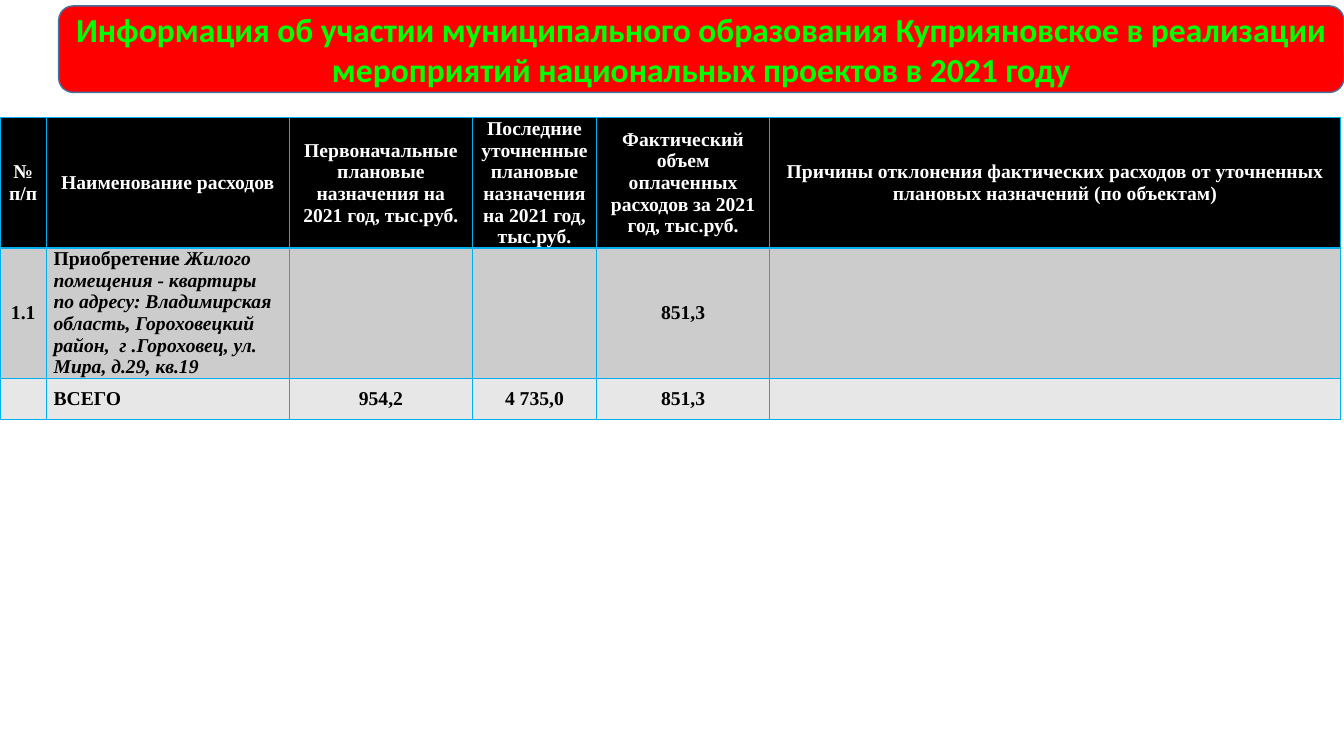
from dataclasses import dataclass

import pptx
import pptx.dml.color
import pptx.enum.shapes
import pptx.enum.text
import pptx.oxml
import pptx.oxml.ns
import pptx.util
from pptx.table import _Cell as Cell
from pptx.text.text import TextFrame

Cm = pptx.util.Cm
Pt = pptx.util.Pt
RGBColor = pptx.dml.color.RGBColor
Align = pptx.enum.text.PP_ALIGN
Anchor = pptx.enum.text.MSO_ANCHOR

WHITE = RGBColor(0xFF, 0xFF, 0xFF)
BLACK = RGBColor(0, 0, 0)
RED = RGBColor(0xFF, 0, 0)
GREEN = RGBColor(0, 0xFF, 0)
STEEL = RGBColor(0x43, 0x73, 0x9E)
CYAN = RGBColor(0, 0xB0, 0xF0)
GRAY = RGBColor(0xCC, 0xCC, 0xCC)
PALE = RGBColor(0xE7, 0xE7, 0xE7)


@dataclass
class Column:
    head: str
    width: float
    align: Align = Align.CENTER


@dataclass
class Row:
    texts: list[str]
    height: float
    fill: RGBColor
    color: RGBColor = BLACK


COLUMNS = [
    Column("№ п/п", 1.17),
    Column("Наименование расходов", 6.12, Align.LEFT),
    Column("Первоначальные плановые назначения на 2021 год, тыс.руб.", 4.62),
    Column("Последние уточненные плановые назначения на 2021 год, тыс.руб.", 3.12),
    Column("Фактический объем оплаченных расходов за 2021 год, тыс.руб.", 4.37),
    Column("Причины отклонения фактических расходов от уточненных "
           "плановых назначений (по объектам)", 14.38),
]
PLACE = ("Жилого помещения - квартиры по адресу: Владимирская область, "
         "Гороховецкий район,  г .Гороховец, ул. Мира, д.29, кв.19")
ROWS = [
    Row([col.head for col in COLUMNS], 3.28, BLACK, WHITE),
    Row(["1.1", "Приобретение ", "", "", "851,3", ""], 3.28, GRAY),
    Row(["", "ВСЕГО", "954,2", "4 735,0", "851,3", ""], 1.04, PALE),
]


def write(frame: TextFrame, text: str, *, font: str = "Times New Roman",
          size: float = 14, color: RGBColor = BLACK, italic: bool = False,
          align: Align = Align.CENTER) -> None:
    """Add a bold run to the first paragraph of the frame."""
    para = frame.paragraphs[0]
    para.alignment = align
    run = para.add_run()
    run.text = text
    run.font.name = font
    run.font.size = Pt(size)
    run.font.bold = True
    run.font.italic = italic
    run.font.color.rgb = color


def border(cell: Cell, color: RGBColor) -> None:
    props = cell._tc.get_or_add_tcPr()
    space = pptx.oxml.ns.nsdecls("a")
    for side in "LRTB":
        props.append(pptx.oxml.parse_xml(
            f'<a:ln{side} {space} w="{Pt(1)}"><a:solidFill>'
            f'<a:srgbClr val="{color}"/></a:solidFill></a:ln{side}>'))


def style(cell: Cell, fill: RGBColor) -> None:
    border(cell, CYAN)
    cell.fill.solid()
    cell.fill.fore_color.rgb = fill
    cell.vertical_anchor = Anchor.MIDDLE
    cell.margin_left = cell.margin_right = Cm(0.18)
    cell.margin_top = cell.margin_bottom = 0


def main() -> None:
    deck = pptx.Presentation()
    deck.slide_width, deck.slide_height = Cm(33.87), Cm(19.05)
    slide = deck.slides.add_slide(deck.slide_layouts[6])

    title = slide.shapes.add_shape(
        pptx.enum.shapes.MSO_SHAPE.ROUNDED_RECTANGLE,
        Cm(1.48), Cm(0.15), Cm(32.39), Cm(2.18))
    title.shadow.inherit = False
    title.fill.solid()
    title.fill.fore_color.rgb = RED
    title.line.color.rgb = STEEL
    title.line.width = Pt(1)
    title.text_frame.word_wrap = True
    title.text_frame.vertical_anchor = Anchor.MIDDLE
    write(title.text_frame,
          "Информация об участии муниципального образования Куприяновское "
          "в реализации мероприятий национальных проектов в 2021 году",
          font="Calibri", size=24, color=GREEN)

    table = slide.shapes.add_table(
        len(ROWS), len(COLUMNS), 0, Cm(2.97),
        Cm(sum(col.width for col in COLUMNS)),
        Cm(sum(row.height for row in ROWS))).table
    for grid, col in zip(table.columns, COLUMNS):
        grid.width = Cm(col.width)
    for r, row in enumerate(ROWS):
        table.rows[r].height = Cm(row.height)
        for c, (text, col) in enumerate(zip(row.texts, COLUMNS)):
            cell = table.cell(r, c)
            style(cell, row.fill)
            if text:
                write(cell.text_frame, text, color=row.color,
                      align=Align.CENTER if r == 0 else col.align)
    write(table.cell(1, 1).text_frame, PLACE, italic=True, align=Align.LEFT)

    deck.save("out.pptx")


if __name__ == "__main__":
    main()
